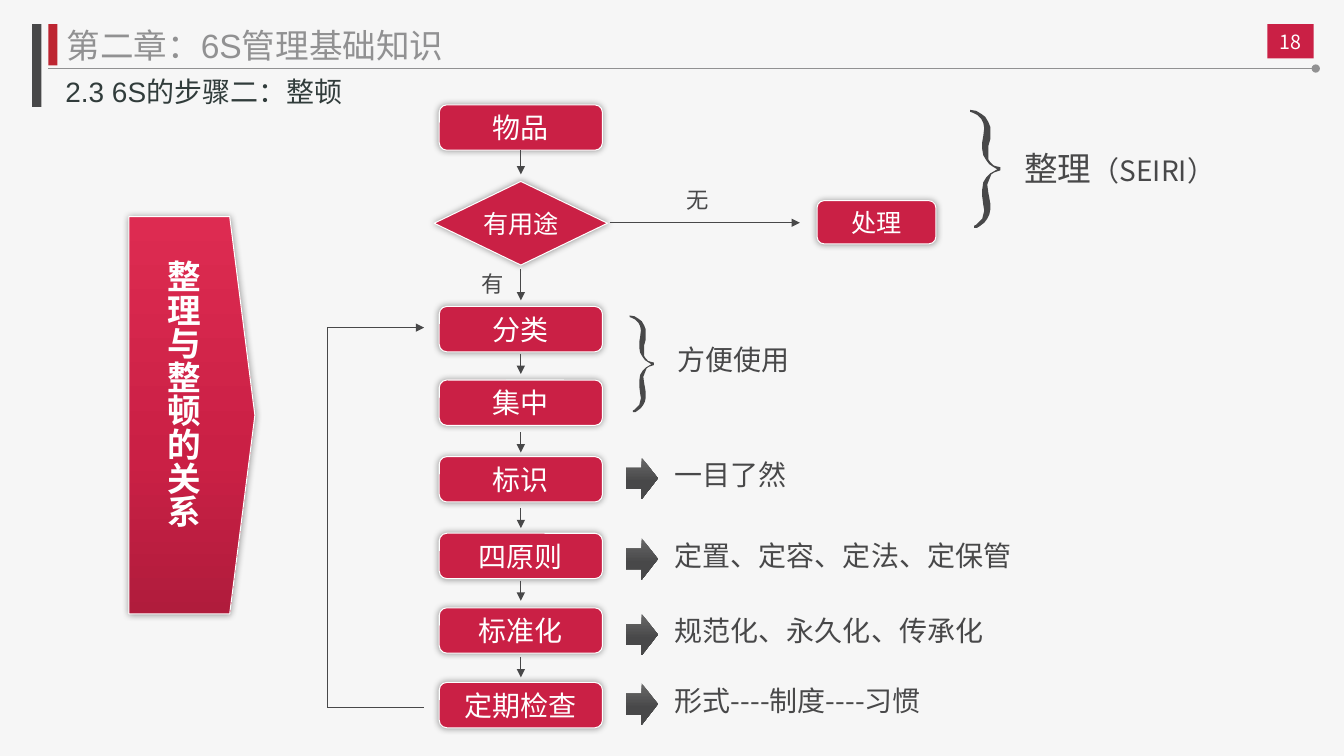
from dataclasses import dataclass

from lxml.etree import SubElement
from pptx import Presentation
from pptx.dml.color import RGBColor
from pptx.enum.shapes import MSO_CONNECTOR, MSO_SHAPE
from pptx.enum.text import MSO_ANCHOR, MSO_AUTO_SIZE, PP_ALIGN
from pptx.oxml import parse_xml
from pptx.oxml.ns import nsdecls, qn
from pptx.util import Inches, Pt

CJK, LATIN = "Noto Sans CJK SC", "Arial"
RED, DARK, GREY, WHITE = "CA2045", "484849", "919192", "FFFFFF"
DARK_STOPS = [(0, "696969"), (59, DARK), (100, DARK)]
RED_STOPS = [(0, "DD2B51"), (61, RED), (100, "B01C3C")]
SPINE = 5.17  # centre line of the flow

# Right-facing brace outline in a 30 by 117 grid
BRACE = [
    (0, 2), (0, 0), (6, 1), (11, 4), (15, 7), (18, 12), (20, 17), (20, 22), (20, 29),
    (18, 36), (18, 43), (18, 49), (20, 52), (23, 55), (26, 56), (30, 57), (30, 60),
    (24, 62), (21, 64), (19, 69), (17, 74), (18, 82), (19, 87), (20, 93), (20, 99),
    (19, 104), (17, 108), (14, 112), (10, 115), (7, 117), (4, 117), (4, 115), (6, 114),
    (9, 111), (12, 108), (13, 104), (14, 100), (13, 94), (12, 86), (12, 79), (13, 72),
    (16, 67), (20, 63), (27, 59), (22, 56), (19, 54), (16, 50), (13, 45), (12, 39),
    (12, 32), (13, 26), (14, 18), (13, 13), (11, 9), (7, 5), (3, 3),
]


@dataclass
class Box:
    left: float
    top: float
    width: float
    height: float

    def emu(self) -> list:
        return [Inches(v) for v in (self.left, self.top, self.width, self.height)]


@dataclass
class Step:
    text: str
    box: Box
    size: int = 20
    kind: MSO_SHAPE = MSO_SHAPE.ROUNDED_RECTANGLE


@dataclass
class Label:
    text: str
    box: Box
    size: int = 20
    color: str = DARK
    latin: str = CJK
    wrap: bool = True


def rgb(color: str) -> RGBColor:
    return RGBColor.from_string(color)


def style(font, size: int, color: str, latin: str = CJK, bold: bool = False) -> None:
    font.size, font.name, font.bold = Pt(size), latin, bold
    font.color.rgb = rgb(color)
    SubElement(font._rPr, qn("a:ea")).set("typeface", CJK)


def add_block(slide, kind, box: Box, fill, edged: bool = False):
    """Preset shape with a plain or graded fill; edged adds a white line and a glow."""
    shape = slide.shapes.add_shape(kind, *box.emu())
    shape.shadow.inherit = False
    shape.fill.solid()
    if isinstance(fill, str):
        shape.fill.fore_color.rgb = rgb(fill)
    else:
        stops = "".join(f'<a:gs pos="{pos * 1000}"><a:srgbClr val="{color}"/></a:gs>'
                        for pos, color in fill)
        props = shape._element.spPr
        props.replace(props.find(qn("a:solidFill")), parse_xml(
            f'<a:gradFill {nsdecls("a")} rotWithShape="1"><a:gsLst>{stops}</a:gsLst>'
            '<a:lin ang="5400000" scaled="0"/></a:gradFill>'))
    if not edged:
        shape.line.fill.background()
        return shape
    shape.line.color.rgb = rgb(WHITE)
    shape.line.width = Pt(0.75)
    shape._element.spPr.find(qn("a:effectLst")).append(parse_xml(
        f'<a:outerShdw {nsdecls("a")} blurRad="{Pt(5)}" dist="0" dir="0" rotWithShape="0">'
        '<a:srgbClr val="000000"><a:alpha val="40000"/></a:srgbClr></a:outerShdw>'))
    return shape


def write_centred(shape, text: str, size: int) -> None:
    frame = shape.text_frame
    frame.word_wrap = False
    frame.vertical_anchor = MSO_ANCHOR.MIDDLE
    frame.text = text
    frame.paragraphs[0].alignment = PP_ALIGN.CENTER
    style(frame.paragraphs[0].font, size, WHITE)


def add_step(slide, step: Step):
    shape = add_block(slide, step.kind, step.box, RED, edged=True)
    write_centred(shape, step.text, step.size)
    return shape


def add_frame(slide, box: Box, wrap: bool = True):
    frame = slide.shapes.add_textbox(*box.emu()).text_frame
    frame.word_wrap = wrap
    frame.auto_size = MSO_AUTO_SIZE.SHAPE_TO_FIT_TEXT
    return frame


def add_label(slide, label: Label) -> None:
    frame = add_frame(slide, label.box, label.wrap)
    frame.text = label.text
    style(frame.paragraphs[0].font, label.size, label.color, label.latin)


def add_line(slide, x1: float, y1: float, x2: float, y2: float,
             tail: str = "triangle", color: str = DARK):
    line = slide.shapes.add_connector(
        MSO_CONNECTOR.STRAIGHT, Inches(x1), Inches(y1), Inches(x2), Inches(y2))
    line.line.color.rgb = rgb(color)
    line.line.width = Pt(0.75)
    SubElement(line.line._get_or_add_ln(), qn("a:tailEnd")).set("type", tail)
    SubElement(line._element.spPr, qn("a:effectLst"))
    return line


def add_brace(slide, box: Box) -> None:
    left, top, width, height = box.emu()
    builder = slide.shapes.build_freeform(*BRACE[0], scale=(width / 30, height / 117))
    builder.add_line_segments(BRACE[1:], close=True)
    brace = builder.convert_to_shape(left, top)
    brace.shadow.inherit = False
    brace.fill.solid()
    brace.fill.fore_color.rgb = rgb(DARK)
    brace.line.fill.background()


def main() -> None:
    deck = Presentation()
    deck.slide_width, deck.slide_height = Inches(13.34), Inches(7.5)
    slide = deck.slides.add_slide(deck.slide_layouts[5])
    slide.background.fill.solid()
    slide.background.fill.fore_color.rgb = rgb("F6F6F6")

    # Header
    page_badge = add_block(slide, MSO_SHAPE.RECTANGLE, Box(12.58, 0.24, 0.46, 0.34), RED)
    write_centred(page_badge, "18", 14)
    add_block(slide, MSO_SHAPE.RECTANGLE, Box(0.48, 0.24, 0.09, 0.41), "BD2531")
    add_block(slide, MSO_SHAPE.RECTANGLE, Box(0.32, 0.24, 0.09, 0.82), DARK)
    add_line(slide, 0.48, 0.68, 13.06, 0.68, "oval", GREY)
    chapter = slide.shapes.title
    chapter.left, chapter.top, chapter.width, chapter.height = Box(0.56, 0.17, 5.44, 0.55).emu()
    chapter.text_frame.text = "第二章：6S管理基础知识"
    chapter.text_frame.auto_size = MSO_AUTO_SIZE.NONE
    chapter.text_frame.vertical_anchor = MSO_ANCHOR.MIDDLE
    chapter.text_frame.paragraphs[0].alignment = PP_ALIGN.LEFT
    style(chapter.text_frame.paragraphs[0].font, 24, GREY, LATIN)
    add_label(slide, Label("2.3 6S的步骤二：整顿", Box(0.55, 0.69, 5.73, 0.44), 20, "313C3B", LATIN))

    # Flow steps
    column = [("物品", 1.04), ("分类", 3.04), ("集中", 3.77), ("标识", 4.53),
              ("四原则", 5.29), ("标准化", 6.03), ("定期检查", 6.77)]
    items, *_ = [add_step(slide, Step(text, Box(4.36, top, 1.62, 0.45))) for text, top in column]
    add_step(slide, Step("有用途", Box(4.31, 1.8, 1.72, 0.83), 18, MSO_SHAPE.FLOWCHART_DECISION))
    add_step(slide, Step("处理", Box(8.11, 1.99, 1.18, 0.43), 18))

    # Arrows between steps
    add_line(slide, SPINE, 1.49, SPINE, 1.73).begin_connect(items, 2)
    add_line(slide, SPINE, 2.67, SPINE, 2.98)
    for top in (3.51, 4.29, 5.04, 5.76, 6.52):
        add_line(slide, SPINE, top, SPINE, top + 0.2)
    add_line(slide, 6.05, 2.21, 7.94, 2.21)

    # Loop from the regular check back to sorting
    add_line(slide, 3.25, 3.25, 4.21, 3.25)
    add_line(slide, 3.25, 7.02, 4.21, 7.02, "none")
    add_line(slide, 3.25, 3.25, 3.25, 7.02, "none")

    # Branch labels and remarks
    add_brace(slide, Box(6.25, 3.13, 0.24, 0.96))
    add_brace(slide, Box(9.63, 1.09, 0.3, 1.17))
    for label in (Label("无", Box(6.72, 1.8, 0.43, 0.37), 16, wrap=False),
                  Label("有", Box(4.68, 2.63, 0.43, 0.37), 16, wrap=False),
                  Label("方便使用", Box(6.63, 3.35, 1.81, 0.44))):
        add_label(slide, label)
    seiri = add_frame(slide, Box(10.07, 1.42, 2.66, 0.5)).paragraphs[0]
    for text, size in (("整理", 24), ("（SEIRI）", 20)):
        run = seiri.add_run()
        run.text = text
        style(run.font, size, DARK)
    for text, top in (("一目了然", 4.49), ("定置、定容、定法、定保管", 5.29),
                      ("规范化、永久化、传承化", 6.04), ("形式----制度----习惯", 6.73)):
        add_block(slide, MSO_SHAPE.RIGHT_ARROW, Box(6.21, top + 0.05, 0.32, 0.41), DARK_STOPS)
        add_label(slide, Label(text, Box(6.6, top, 4.17, 0.44)))

    # Vertical banner
    banner = add_block(slide, MSO_SHAPE.PENTAGON, Box(1.28, 2.15, 1.25, 3.94), RED_STOPS, edged=True)
    banner.adjustments[0] = 0.2
    relation = add_frame(slide, Box(1.62, 2.58, 0.4, 3.2))
    relation.margin_left = relation.margin_right = relation.margin_top = relation.margin_bottom = 0
    relation._txBody.bodyPr.set("vert", "eaVert")
    relation.text = "整理与整顿的关系"
    relation.paragraphs[0].alignment = PP_ALIGN.CENTER
    style(relation.paragraphs[0].font, 24, WHITE, bold=True)

    deck.save("out.pptx")


if __name__ == "__main__":
    main()
